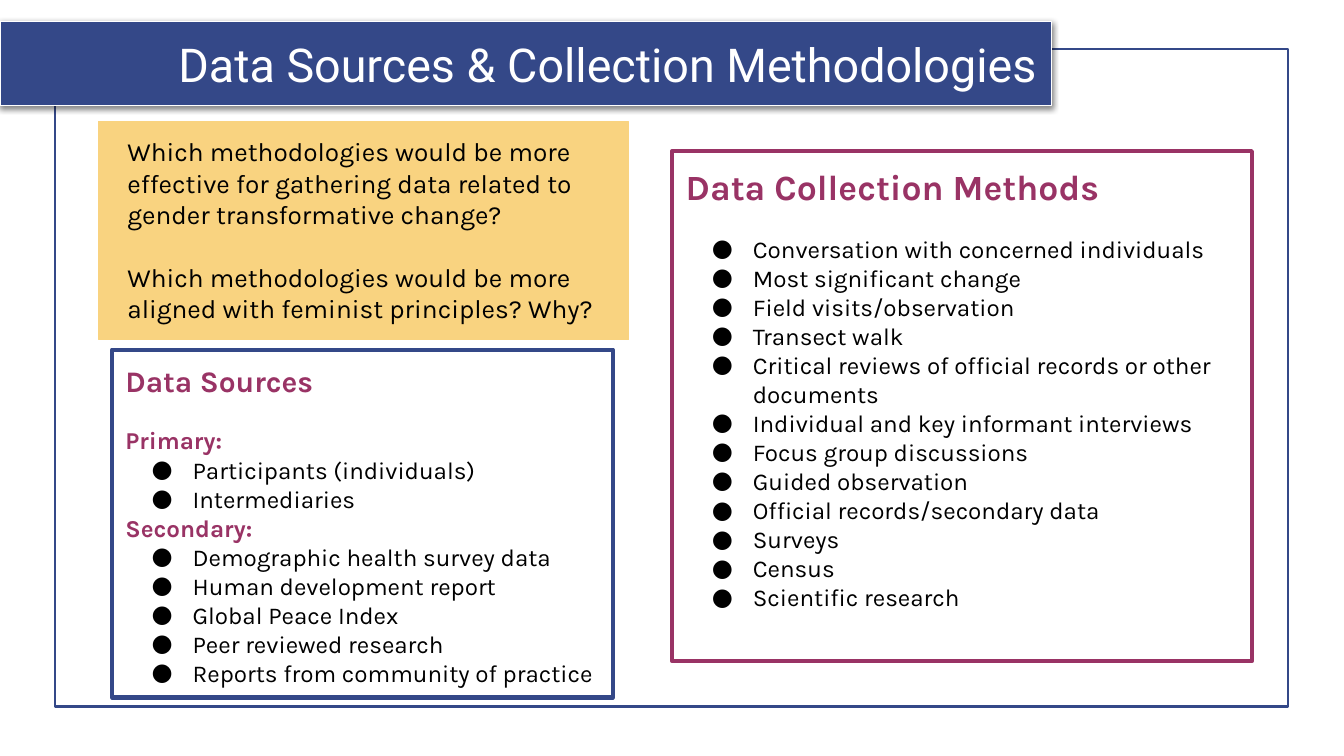
"""Build the slide on data sources and collection methodologies."""
from lxml import etree
from pptx import Presentation
from pptx.dml.color import RGBColor
from pptx.enum.shapes import MSO_SHAPE
from pptx.enum.text import MSO_ANCHOR, MSO_AUTO_SIZE, PP_ALIGN
from pptx.oxml.ns import qn
from pptx.util import Pt

RECTANGLE = MSO_SHAPE.RECTANGLE
TOP, MIDDLE = MSO_ANCHOR.TOP, MSO_ANCHOR.MIDDLE
LEFT, RIGHT = PP_ALIGN.LEFT, PP_ALIGN.RIGHT
NO_AUTOFIT = MSO_AUTO_SIZE.NONE

COLORS = {"navy": "344888", "plum": "993365", "yellow": "F9D380",
          "white": "FFFFFF", "black": "000000"}
INSET = Pt(9.6)
ITEM_SIZE = 17.3


def set_box(shape, bounds, fill, line, width):
    """Place a shape and set its fill, outline and text frame."""
    shape.left, shape.top, shape.width, shape.height = map(Pt, bounds)
    if fill:
        shape.fill.solid()
        shape.fill.fore_color.rgb = RGBColor.from_string(COLORS[fill])
    else:
        shape.fill.background()
    if line:
        shape.line.color.rgb = RGBColor.from_string(COLORS[line])
        shape.line.width = Pt(width)
    frame = shape.text_frame
    frame.word_wrap = True
    frame.auto_size = NO_AUTOFIT
    frame.vertical_anchor = TOP
    frame.margin_left = frame.margin_right = INSET
    frame.margin_top = frame.margin_bottom = INSET


def set_paragraph(paragraph, text, size, color, font="Karla", bold=False,
                  gap=0, bullet=False):
    """Fill a paragraph, with a round bullet if it is a list item."""
    paragraph.text = text
    paragraph.alignment = LEFT
    paragraph.line_spacing = 1.0
    paragraph.space_before = Pt(0)
    paragraph.space_after = Pt(gap)
    properties = paragraph._p.get_or_add_pPr()
    properties.set("marL", str(Pt(48 if bullet else 0)))
    properties.set("indent", str(Pt(-29.3 if bullet else 0)))
    if bullet:
        bullet_color = etree.SubElement(properties, qn("a:buClr"))
        etree.SubElement(bullet_color, qn("a:srgbClr"), val=COLORS["black"])
        etree.SubElement(properties, qn("a:buFont"), typeface=font)
        etree.SubElement(properties, qn("a:buChar"), char="●")
    else:
        etree.SubElement(properties, qn("a:buNone"))
    paragraph.font.name = font
    paragraph.font.size = Pt(size)
    paragraph.font.bold = bold
    paragraph.font.color.rgb = RGBColor.from_string(COLORS[color])


presentation = Presentation()
presentation.slide_width, presentation.slide_height = Pt(960), Pt(540)
slide = presentation.slides.add_slide(presentation.slide_layouts[3])
title, sources, methods = slide.placeholders

panels = [
    (sources, (80, 249.8, 357.8, 248.4), "navy", "Data Sources", 21.3, [
        ("Primary:", ["Participants (individuals)", "Intermediaries"]),
        ("Secondary:", [
            "Demographic health survey data",
            "Human development report",
            "Global Peace Index",
            "Peer reviewed research",
            "Reports from community of practice",
        ]),
    ]),
    (methods, (480.2, 108, 414, 364.3), "plum", "Data Collection Methods", 25.3, [
        (None, [
            "Conversation with concerned individuals",
            "Most significant change",
            "Field visits/observation",
            "Transect walk",
            "Critical reviews of official records or other documents",
            "Individual and key informant interviews",
            "Focus group discussions",
            "Guided observation",
            "Official records/secondary data",
            "Surveys",
            "Census",
            "Scientific research",
        ]),
    ]),
]
for panel, bounds, line, heading, heading_size, groups in panels:
    set_box(panel, bounds, "white", line, 3)
    frame = panel.text_frame
    set_paragraph(frame.paragraphs[0], heading, heading_size, "plum",
                  bold=True, gap=19.2)
    for label, items in groups:
        if label:
            set_paragraph(frame.add_paragraph(), label, ITEM_SIZE, "plum", bold=True)
        for item in items:
            set_paragraph(frame.add_paragraph(), item, ITEM_SIZE, "black", bullet=True)

rectangles = [
    ((70.6, 87.1, 378.7, 155.5), "yellow", "yellow", 0.75),
    ((39.6, 35.3, 880.6, 469.4), None, "navy", 1.5),
]
for bounds, fill, line, width in rectangles:
    rectangle = slide.shapes.add_shape(RECTANGLE, *map(Pt, bounds))
    rectangle.shadow.inherit = False
    set_box(rectangle, bounds, fill, line, width)

question_bounds = (81.4, 87.1, 357.8, 142.6)
question_box = slide.shapes.add_textbox(*map(Pt, question_bounds))
set_box(question_box, question_bounds, None, None, 0)
questions = question_box.text_frame
set_paragraph(
    questions.paragraphs[0],
    "Which methodologies would be more effective for gathering data "
    "related to gender transformative change?",
    18.7, "black", gap=22.4)
set_paragraph(
    questions.add_paragraph(),
    "Which methodologies would be more aligned with feminist principles? Why?",
    18.7, "black")

set_box(title, (0, 15.1, 751, 60.5), "navy", "white", 0.75)
title.text_frame.vertical_anchor = MIDDLE
title_paragraph = title.text_frame.paragraphs[0]
set_paragraph(title_paragraph, "Data Sources & Collection Methodologies",
              33.3, "white", font="Roboto")
title_paragraph.alignment = RIGHT
effects = etree.SubElement(title.element.spPr, qn("a:effectLst"))
shadow = etree.SubElement(effects, qn("a:outerShdw"), blurRad=str(Pt(4.5)),
                          dist=str(Pt(1.5)), dir="5400000", rotWithShape="0")
shadow_color = etree.SubElement(shadow, qn("a:srgbClr"), val=COLORS["black"])
etree.SubElement(shadow_color, qn("a:alpha"), val="48000")
title.element.getparent().append(title.element)

presentation.save("out.pptx")
